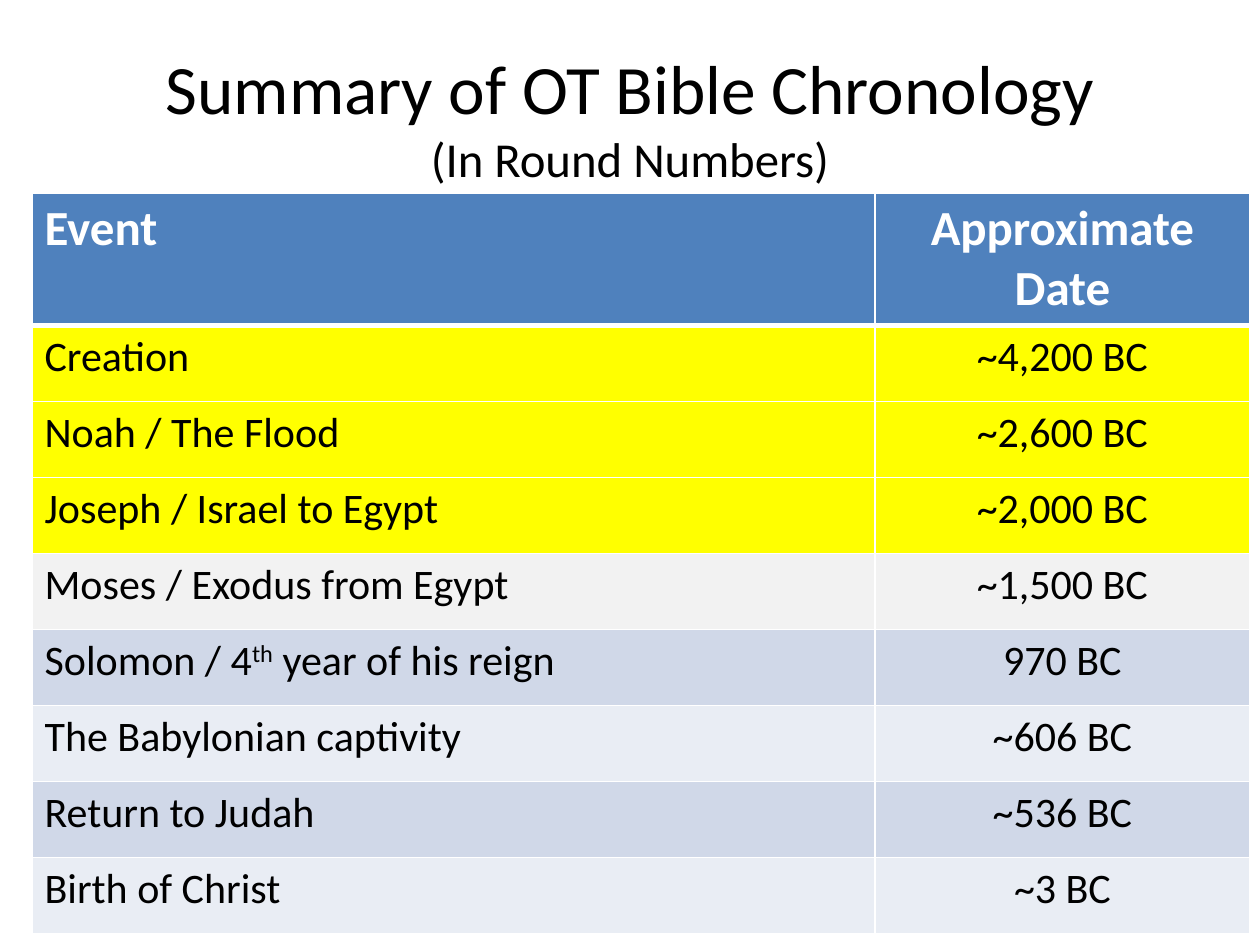
from dataclasses import dataclass

from lxml import etree
from pptx import Presentation
from pptx.dml.color import RGBColor
from pptx.enum.text import MSO_ANCHOR, MSO_AUTO_SIZE, PP_ALIGN
from pptx.oxml.ns import qn
from pptx.util import Pt

LEFT = PP_ALIGN.LEFT
CENTER = PP_ALIGN.CENTER
MIDDLE = MSO_ANCHOR.MIDDLE
NO_AUTOFIT = MSO_AUTO_SIZE.NONE

EMU_PER_PX = 914400 / 126
FONT = "Calibri"
COLORS = {
    "text": "000000",
    "white": "FFFFFF",
    "header": "4F81BD",
    "highlight": "FFFF00",
    "neutral": "F2F2F2",
    "band_dark": "D0D8E8",
    "band_light": "E9EDF4",
}
TITLE_SIZES = (39.6, 27.9)
COLUMN_WIDTHS = (843, 375)
HEADER_HEIGHT = 121
ROW_HEIGHT = 76


@dataclass(frozen=True)
class Event:
    name: tuple[str, ...]
    date: str
    fill: str


HEADER = Event(("Event",), "Approximate Date", "header")
EVENTS = (
    Event(("Creation",), "~4,200 BC", "highlight"),
    Event(("Noah / The Flood",), "~2,600 BC", "highlight"),
    Event(("Joseph / Israel to Egypt",), "~2,000 BC", "highlight"),
    Event(("Moses / Exodus from Egypt",), "~1,500 BC", "neutral"),
    Event(("Solomon / 4", "th", " year of his reign"), "970 BC", "band_dark"),
    Event(("The Babylonian captivity",), "~606 BC", "band_light"),
    Event(("Return to Judah",), "~536 BC", "band_dark"),
    Event(("Birth of Christ",), "~3 BC", "band_light"),
)


def px(length: int) -> int:
    return round(length * EMU_PER_PX)


def color(name: str) -> RGBColor:
    return RGBColor.from_string(COLORS[name])


def format_run(run, size: float, color_name: str, bold: bool = False) -> None:
    run.font.name = FONT
    run.font.size = Pt(size)
    run.font.bold = bold
    run.font.color.rgb = color(color_name)


def add_borders(cell, bottom_width: int) -> None:
    properties = cell._tc.get_or_add_tcPr()
    for side, width in (("L", 1), ("R", 1), ("T", 1), ("B", bottom_width)):
        line = etree.SubElement(properties, qn(f"a:ln{side}"), w=str(Pt(width)))
        fill = etree.SubElement(line, qn("a:solidFill"))
        etree.SubElement(fill, qn("a:srgbClr"), val=COLORS["white"])


def fill_cell(cell, parts: tuple[str, ...], alignment, fill: str) -> None:
    is_header = fill == "header"
    add_borders(cell, 3 if is_header else 1)
    cell.fill.solid()
    cell.fill.fore_color.rgb = color(fill)
    paragraph = cell.text_frame.paragraphs[0]
    paragraph.alignment = alignment
    for index, part in enumerate(parts):
        run = paragraph.add_run()
        run.text = part
        format_run(run, 28 if is_header else 24, "white" if is_header else "text", is_header)
        if index % 2:
            run._r.get_or_add_rPr().set("baseline", "30000")


def add_title(slide) -> None:
    title = slide.shapes.title
    title.left, title.top, title.width, title.height = map(px, (63, 38, 1134, 157))
    text_frame = title.text_frame
    text_frame.text = "Summary of OT Bible Chronology\v(In Round Numbers)"
    text_frame.auto_size = NO_AUTOFIT
    text_frame.vertical_anchor = MIDDLE
    paragraph = text_frame.paragraphs[0]
    paragraph.alignment = CENTER
    for run, size in zip(paragraph.runs, TITLE_SIZES):
        format_run(run, size, "text")
    line_break = paragraph._p.find(qn("a:br"))
    etree.SubElement(line_break, qn("a:rPr"), sz=str(round(TITLE_SIZES[0] * 100)))


def add_chronology(slide) -> None:
    rows = (HEADER, *EVENTS)
    height = HEADER_HEIGHT + ROW_HEIGHT * len(EVENTS)
    frame = slide.shapes.add_table(
        len(rows), len(COLUMN_WIDTHS), px(32), px(193), px(sum(COLUMN_WIDTHS)), px(height)
    )
    table = frame.table
    for column, width in zip(table.columns, COLUMN_WIDTHS):
        column.width = px(width)
    for index, event in enumerate(rows):
        table.rows[index].height = px(ROW_HEIGHT if index else HEADER_HEIGHT)
        fill_cell(table.cell(index, 0), event.name, LEFT, event.fill)
        fill_cell(table.cell(index, 1), (event.date,), CENTER, event.fill)


def main() -> None:
    presentation = Presentation()
    presentation.slide_width = px(1260)
    presentation.slide_height = px(945)
    slide = presentation.slides.add_slide(presentation.slide_layouts[5])
    add_title(slide)
    add_chronology(slide)
    presentation.save("out.pptx")


if __name__ == "__main__":
    main()
